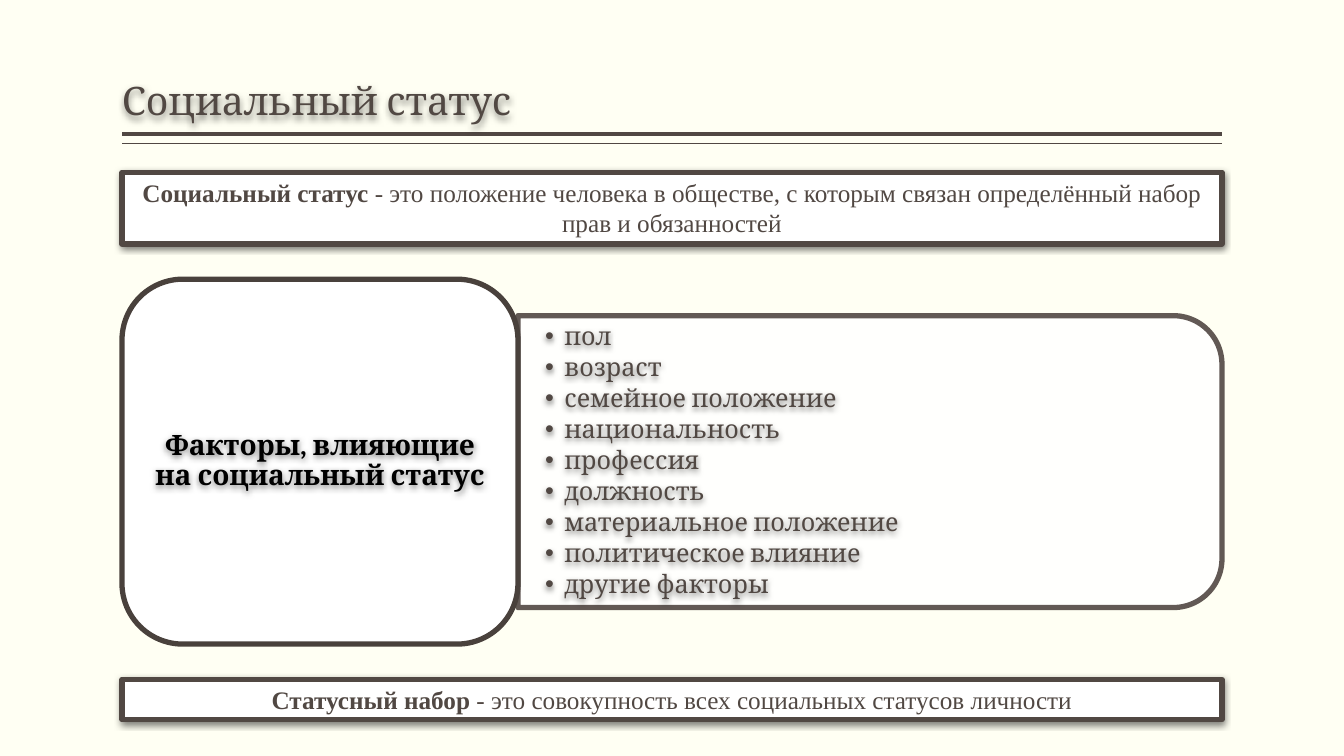
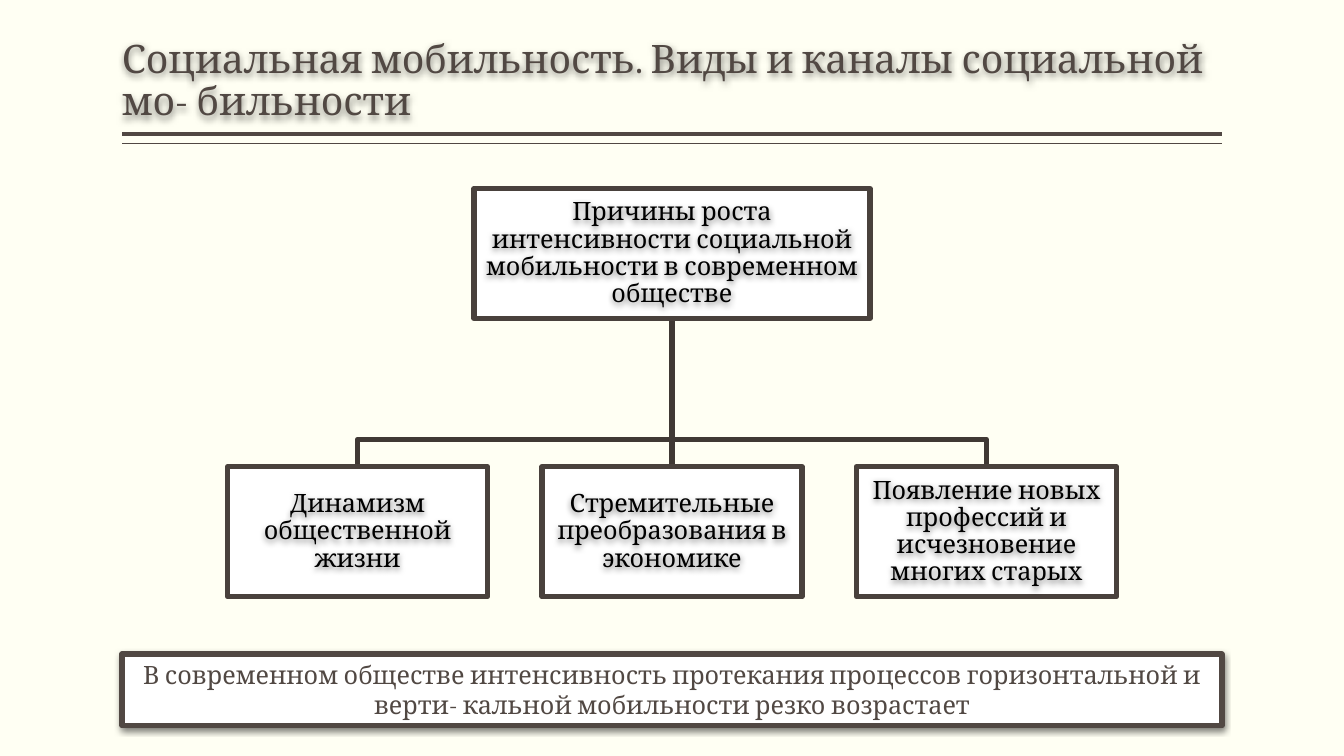
from dataclasses import dataclass

from lxml.etree import SubElement
from pptx import Presentation
from pptx.dml.color import RGBColor
from pptx.enum.shapes import MSO_CONNECTOR, MSO_SHAPE
from pptx.enum.text import MSO_ANCHOR, PP_ALIGN
from pptx.oxml.ns import qn
from pptx.util import Inches, Pt

PAPER = RGBColor(0xFF, 0xFF, 0xF3)
WHITE = RGBColor(0xFF, 0xFF, 0xFF)
BLACK = RGBColor(0x00, 0x00, 0x00)
BROWN = RGBColor(0x51, 0x48, 0x43)
DARK_BROWN = RGBColor(0x49, 0x41, 0x3C)
BRANCH_BROWN = RGBColor(0x40, 0x39, 0x34)

SERIF = "Cambria"
ROMAN = "Times New Roman"
BORDER = 3.78

SLIDE_WIDTH, SLIDE_HEIGHT = Inches(13.333), Inches(7.5)

# Places and sizes are percentages of the slide's width and height.
MARGIN = 9.08
CONTENT = 100 - 2 * MARGIN
FACTORS_WIDTH = 0.36 * CONTENT


def across(share: float) -> int:
    return round(SLIDE_WIDTH * share / 100)


def down(share: float) -> int:
    return round(SLIDE_HEIGHT * share / 100)


@dataclass(frozen=True)
class Area:
    left: float
    top: float
    width: float
    height: float

    @property
    def center(self) -> float:
        return self.left + self.width / 2

    @property
    def bottom(self) -> float:
        return self.top + self.height

    def emu(self) -> tuple[int, int, int, int]:
        return across(self.left), down(self.top), across(self.width), down(self.height)


@dataclass(frozen=True)
class TextStyle:
    size: float = 18
    color: RGBColor = BROWN
    font: str = SERIF
    bold: bool = False
    align: PP_ALIGN = PP_ALIGN.CENTER
    anchor: MSO_ANCHOR = MSO_ANCHOR.MIDDLE
    spacing: float = 0.9
    insets: tuple[float, float] = (0.01, 0.01)
    bulleted: bool = False


TITLE = TextStyle(28, align=PP_ALIGN.LEFT, anchor=MSO_ANCHOR.BOTTOM, insets=(0, 0.05))
CAPTION = TextStyle(anchor=MSO_ANCHOR.TOP, spacing=1, insets=(0.1, 0.05))
ROMAN_CAPTION = TextStyle(font=ROMAN, anchor=MSO_ANCHOR.TOP, spacing=1, insets=(0.1, 0.05))
FACTORS_HEADING = TextStyle(20, BLACK, bold=True, insets=(0.25, 0.2))
FACTOR_LIST = TextStyle(align=PP_ALIGN.LEFT, insets=(0.27, 0.14), bulleted=True)
CAUSE = TextStyle(color=BLACK)

TITLE_AREA = Area(MARGIN, 1.07, CONTENT, 16)
RULES = ((17.75, 3), (19, 1))

FACTORS_AREA = Area(MARGIN, 36.93, FACTORS_WIDTH, 48.27)
FACTORS = ["пол", "возраст", "семейное положение", "национальность", "профессия",
           "должность", "материальное положение", "политическое влияние",
           "другие факторы"]

ROOT_AREA = Area(50 - FACTORS_WIDTH / 2, 24.93, FACTORS_WIDTH, 17.2)
BRANCH_LEVEL = 58.13
CAUSE_TOP, CAUSE_WIDTH, CAUSE_STEP = 61.73, 19.35, 23.4
CAUSES = ["Динамизм общественной жизни",
          "Стремительные преобразования в экономике",
          "Появление новых профессий и исчезновение многих старых"]


def cast_shadow(shape) -> None:
    """Add a soft shadow below; on an unfilled box it falls from the text."""
    shape.shadow.inherit = False
    effects = shape._element.spPr.find(qn("a:effectLst"))
    shadow = SubElement(effects, qn("a:outerShdw"), blurRad=str(Pt(4.5)),
                        dist=str(Pt(1.5)), dir="5400000", algn="t", rotWithShape="0")
    black = SubElement(shadow, qn("a:srgbClr"), val=str(BLACK))
    SubElement(black, qn("a:alpha"), val="50000")


def make_translucent(shape, percent: int) -> None:
    for color in shape._element.spPr.iter(qn("a:srgbClr")):
        SubElement(color, qn("a:alpha"), val=str(percent * 1000))


def add_bullet(paragraph) -> None:
    properties = paragraph._p.get_or_add_pPr()
    properties.set("marL", str(Inches(0.19)))
    properties.set("indent", str(-Inches(0.19)))
    color = SubElement(properties, qn("a:buClr"))
    SubElement(color, qn("a:srgbClr"), val=str(BROWN))
    SubElement(properties, qn("a:buFont"), typeface="Arial")
    SubElement(properties, qn("a:buChar"), char="•")


def write(shape, lines: list[str], style: TextStyle, term: str = "") -> None:
    """Fill the shape with one paragraph per line, after an optional bold term."""
    frame = shape.text_frame
    frame.word_wrap = True
    frame.vertical_anchor = style.anchor
    side, edge = style.insets
    frame.margin_left = frame.margin_right = Inches(side)
    frame.margin_top = frame.margin_bottom = Inches(edge)
    for index, line in enumerate(lines):
        paragraph = frame.add_paragraph() if index else frame.paragraphs[0]
        if style.bulleted:
            add_bullet(paragraph)
            if index:
                paragraph.space_before = Pt(2.7)
        paragraph.alignment = style.align
        paragraph.line_spacing = style.spacing
        font = paragraph.font
        font.name, font.size, font.bold = style.font, Pt(style.size), style.bold
        font.color.rgb = style.color
        if term:
            bold_term = paragraph.add_run()
            bold_term.text = term
            bold_term.font.bold = True
        paragraph.add_run().text = line


def add_text(slide, area: Area, lines: list[str], style: TextStyle) -> None:
    box = slide.shapes.add_textbox(*area.emu())
    write(box, lines, style)
    cast_shadow(box)


def add_panel(slide, area: Area, preset=MSO_SHAPE.RECTANGLE, border=DARK_BROWN):
    panel = slide.shapes.add_shape(preset, *area.emu())
    panel.shadow.inherit = False
    panel.fill.solid()
    panel.fill.fore_color.rgb = WHITE
    panel.line.color.rgb = border
    panel.line.width = Pt(BORDER)
    return panel


def add_caption(slide, top: float, height: float, text: str,
                style: TextStyle, term: str = "") -> None:
    caption = add_panel(slide, Area(MARGIN, top, CONTENT, height), border=BROWN)
    cast_shadow(caption)
    write(caption, [text], style, term)


def add_line(slide, start: tuple[float, float], end: tuple[float, float],
             color: RGBColor, width: float) -> None:
    line = slide.shapes.add_connector(MSO_CONNECTOR.STRAIGHT, across(start[0]),
                                      down(start[1]), across(end[0]), down(end[1]))
    line.line.color.rgb = color
    line.line.width = Pt(width)
    SubElement(line._element.spPr, qn("a:effectLst"))


def add_titled_slide(presentation, title: str):
    slide = presentation.slides.add_slide(presentation.slide_layouts[6])
    slide.background.fill.solid()
    slide.background.fill.fore_color.rgb = PAPER
    for level, width in RULES:
        add_line(slide, (MARGIN, level), (100 - MARGIN, level), BROWN, width)
    add_text(slide, TITLE_AREA, [title], TITLE)
    return slide


def add_factors(slide) -> None:
    height = 0.8 * FACTORS_AREA.height
    list_area = Area(MARGIN + FACTORS_WIDTH, FACTORS_AREA.top + 0.1 * FACTORS_AREA.height,
                     CONTENT - FACTORS_WIDTH, height)
    panel = add_panel(slide, list_area, MSO_SHAPE.ROUND_2_SAME_RECTANGLE, BROWN)
    # A quarter turn brings the rounded top to the right side.
    left, top, width, height = list_area.emu()
    panel.left, panel.top = left + (width - height) // 2, top + (height - width) // 2
    panel.width, panel.height = height, width
    panel.rotation = 90
    make_translucent(panel, 90)
    add_text(slide, list_area, FACTORS, FACTOR_LIST)
    add_panel(slide, FACTORS_AREA, MSO_SHAPE.ROUNDED_RECTANGLE)
    add_text(slide, FACTORS_AREA, ["Факторы, влияющие на социальный статус"],
             FACTORS_HEADING)


def add_branches(slide, areas: list[Area]) -> None:
    """Join the root to its causes by a trunk and a bracket."""
    add_line(slide, (ROOT_AREA.center, ROOT_AREA.bottom), (ROOT_AREA.center, CAUSE_TOP),
             BRANCH_BROWN, BORDER)
    first, last = areas[0].center, areas[-1].center
    outline = slide.shapes.build_freeform(across(first), down(CAUSE_TOP))
    corners = ((first, BRANCH_LEVEL), (last, BRANCH_LEVEL), (last, CAUSE_TOP))
    outline.add_line_segments([(across(x), down(y)) for x, y in corners], close=False)
    bracket = outline.convert_to_shape()
    bracket.shadow.inherit = False
    bracket.fill.background()
    bracket.line.color.rgb = BRANCH_BROWN
    bracket.line.width = Pt(BORDER)


def add_cause_tree(slide) -> None:
    middle = (len(CAUSES) - 1) / 2
    areas = [Area(50 + (index - middle) * CAUSE_STEP - CAUSE_WIDTH / 2, CAUSE_TOP,
                  CAUSE_WIDTH, ROOT_AREA.height) for index in range(len(CAUSES))]
    add_branches(slide, areas)
    root = "Причины роста интенсивности социальной мобильности в современном обществе"
    for area, text in zip([ROOT_AREA, *areas], [root, *CAUSES]):
        add_panel(slide, area)
        add_text(slide, area, [text], CAUSE)


def add_status_slide(presentation) -> None:
    slide = add_titled_slide(presentation, "Социальный статус")
    add_caption(slide, 22.8, 9.47,
                " - это положение человека в обществе, с которым связан "
                "определённый набор прав и обязанностей",
                ROMAN_CAPTION, "Социальный статус")
    add_factors(slide)
    add_caption(slide, 89.87, 5.33,
                "- это совокупность всех социальных статусов личности",
                ROMAN_CAPTION, "Статусный набор ")


def add_mobility_slide(presentation) -> None:
    slide = add_titled_slide(
        presentation, "Социальная мобильность. Виды и каналы социальной мо- бильности")
    add_caption(slide, 86.53, 9.47,
                "В современном обществе интенсивность протекания процессов "
                "горизонтальной и верти- кальной мобильности резко возрастает", CAPTION)
    add_cause_tree(slide)


def main() -> None:
    presentation = Presentation()
    presentation.slide_width, presentation.slide_height = SLIDE_WIDTH, SLIDE_HEIGHT
    add_status_slide(presentation)
    add_mobility_slide(presentation)
    presentation.save("out.pptx")


if __name__ == "__main__":
    main()
